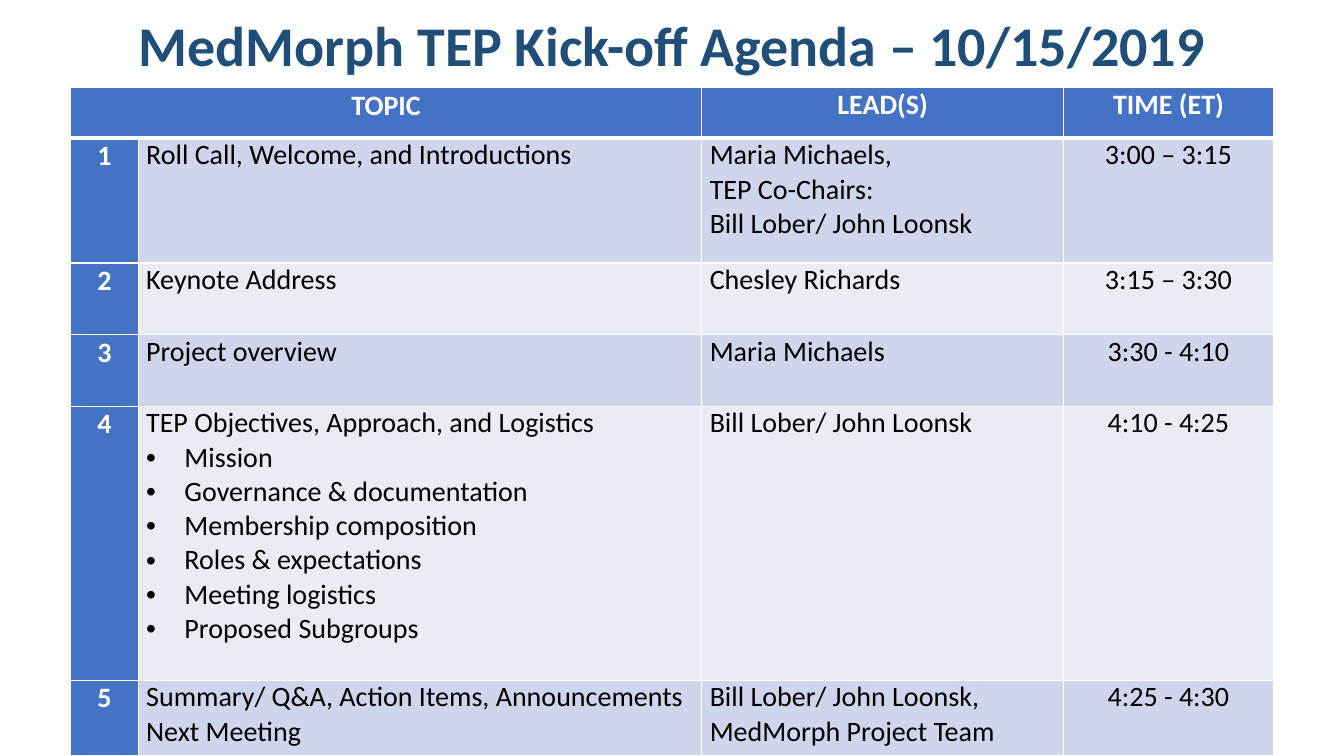
from lxml.etree import SubElement
from pptx import Presentation
from pptx.dml.color import RGBColor
from pptx.enum.text import MSO_ANCHOR, PP_ALIGN
from pptx.oxml.ns import qn
from pptx.util import Inches, Pt

FONT = "Calibri"
WHITE, BLACK, NAVY, BLUE = "FFFFFF", "000000", "1F4E79", "4472C4"
BANDS = ["CFD5EA", "E9EBF5"]
COLUMN_WIDTHS = [0.67, 5.59, 3.59, 2.08]
ROW_HEIGHTS = [0.5, 1.24, 0.71, 0.71, 2.72, 0.75]
HEADINGS = ["TOPIC", "", "LEAD(S)", "TIME (ET)"]
BULLET = "• "
AGENDA = [
    ("Roll Call, Welcome, and Introductions",
     "Maria Michaels,\nTEP Co-Chairs:\nBill Lober/ John Loonsk", "3:00 – 3:15"),
    ("Keynote Address", "Chesley Richards", "3:15 – 3:30"),
    ("Project overview", "Maria Michaels", "3:30 - 4:10"),
    ("TEP Objectives, Approach, and Logistics\n• Mission\n• Governance & documentation\n"
     "• Membership composition\n• Roles & expectations\n• Meeting logistics\n• Proposed Subgroups",
     "Bill Lober/ John Loonsk", "4:10 - 4:25"),
    ("Summary/ Q&A, Action Items, Announcements\nNext Meeting",
     "Bill Lober/ John Loonsk, MedMorph Project Team", "4:25 - 4:30"),
]


def color(value):
    return RGBColor.from_string(value)


def style_paragraph(para, size, shade, bold, centered):
    para.alignment = PP_ALIGN.CENTER if centered else PP_ALIGN.LEFT
    for span in para.runs:
        span.font.name = FONT
        span.font.size = Pt(size)
        span.font.bold = bold
        span.font.color.rgb = color(shade)


def add_bullet(para):
    properties = para._p.get_or_add_pPr()
    properties.set("marL", str(Inches(0.38)))
    properties.set("indent", str(-Inches(0.38)))
    SubElement(properties, qn("a:buFont"), typeface="Arial")
    SubElement(properties, qn("a:buChar"), char=BULLET.strip())


def set_borders(cell, top, bottom):
    properties = cell._tc.get_or_add_tcPr()
    widths = {"a:lnL": 1, "a:lnR": 1, "a:lnT": top, "a:lnB": bottom}
    for position, (side, width) in enumerate(widths.items()):
        line = SubElement(properties, qn(side), w=str(Pt(width)))
        fill = SubElement(line, qn("a:solidFill"))
        SubElement(fill, qn("a:srgbClr"), val=WHITE)
        properties.insert(position, line)


def fill_cell(cell, text, row, column):
    header, label = row == 0, row == 0 or column == 0
    cell.fill.solid()
    cell.fill.fore_color.rgb = color(BLUE if label else BANDS[(row - 1) % 2])
    side, edge = (0.01, 0.01) if column == 0 else (0.08, 0)
    cell.margin_left = cell.margin_right = Inches(side)
    cell.margin_top = cell.margin_bottom = Inches(edge)
    cell.vertical_anchor = MSO_ANCHOR.TOP
    cell.text_frame.text = text
    for para in cell.text_frame.paragraphs:
        if para.text.startswith(BULLET):
            para.text = para.text.removeprefix(BULLET)
            add_bullet(para)
        style_paragraph(para, 20, WHITE if label else BLACK, label,
                        label or column == 3)
    set_borders(cell, 3 if row == 1 else 1, 3 if header else 1)


def add_title(page, left, top, width, height):
    box = page.shapes.add_textbox(Inches(left), Inches(top), Inches(width), Inches(height))
    frame = box.text_frame
    frame.word_wrap = True
    frame.vertical_anchor = MSO_ANCHOR.MIDDLE
    frame.text = "MedMorph TEP Kick-off Agenda – 10/15/2019"
    para = frame.paragraphs[0]
    para.line_spacing = 0.9
    style_paragraph(para, 40, NAVY, True, True)


def add_agenda(page, left, top, width, height):
    rows = [HEADINGS] + [(str(number), *item) for number, item in enumerate(AGENDA, 1)]
    table = page.shapes.add_table(len(rows), len(HEADINGS), Inches(left), Inches(top),
                                  Inches(width), Inches(height)).table
    for column, share in zip(table.columns, COLUMN_WIDTHS):
        column.width = Inches(width * share / sum(COLUMN_WIDTHS))
    for row, share in zip(table.rows, ROW_HEIGHTS):
        row.height = Inches(height * share / sum(ROW_HEIGHTS))
    for row, texts in enumerate(rows):
        for column, text in enumerate(texts):
            fill_cell(table.cell(row, column), text, row, column)
    table.cell(0, 0).merge(table.cell(0, 1))


def main():
    deck = Presentation()
    deck.slide_width, deck.slide_height = Inches(13.33), Inches(7.5)
    page = deck.slides.add_slide(deck.slide_layouts[6])
    add_agenda(page, 0.7, 0.87, 11.93, 6.63)
    add_title(page, 0.7, 0.08, 11.93, 0.79)
    deck.save("out.pptx")


if __name__ == "__main__":
    main()
